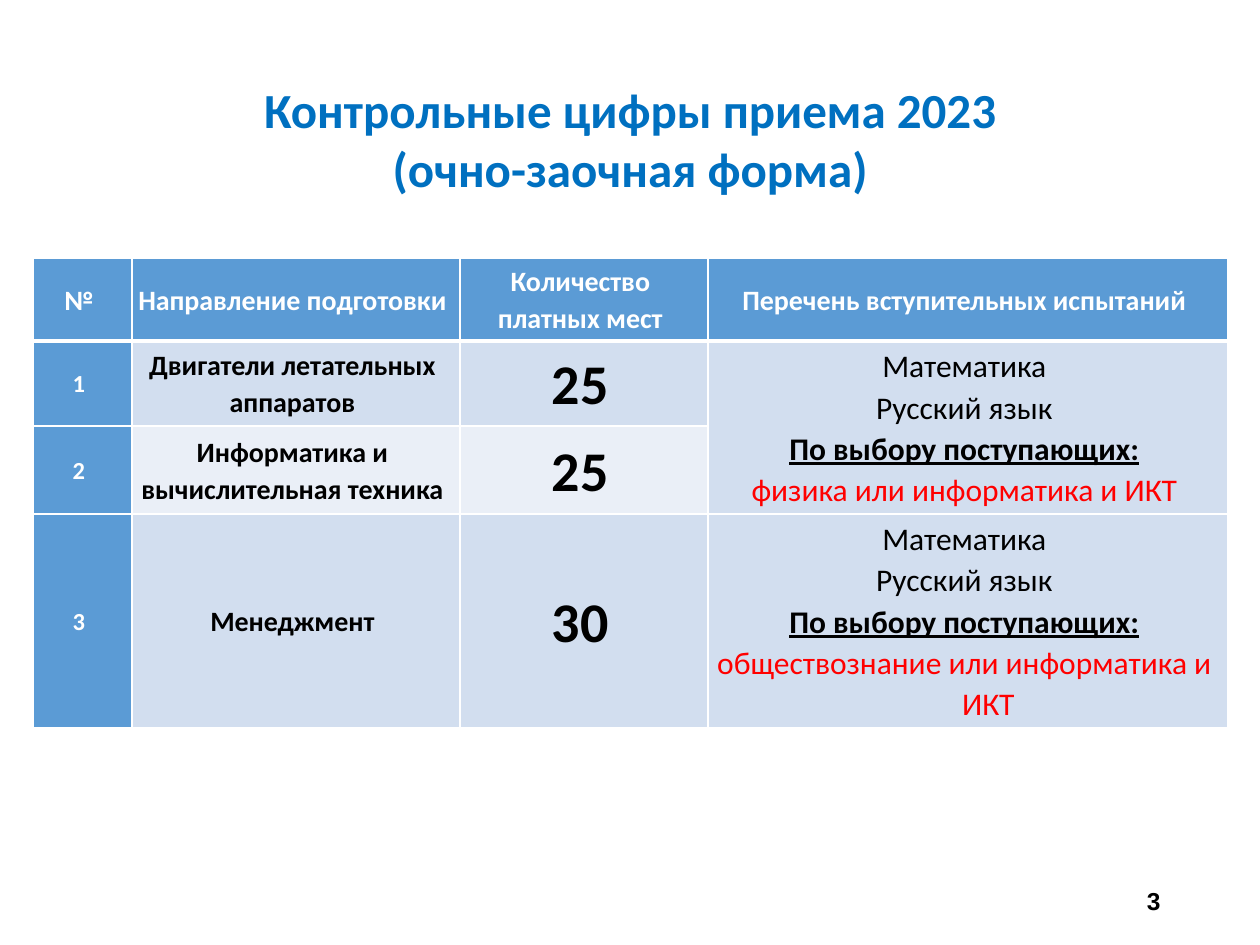
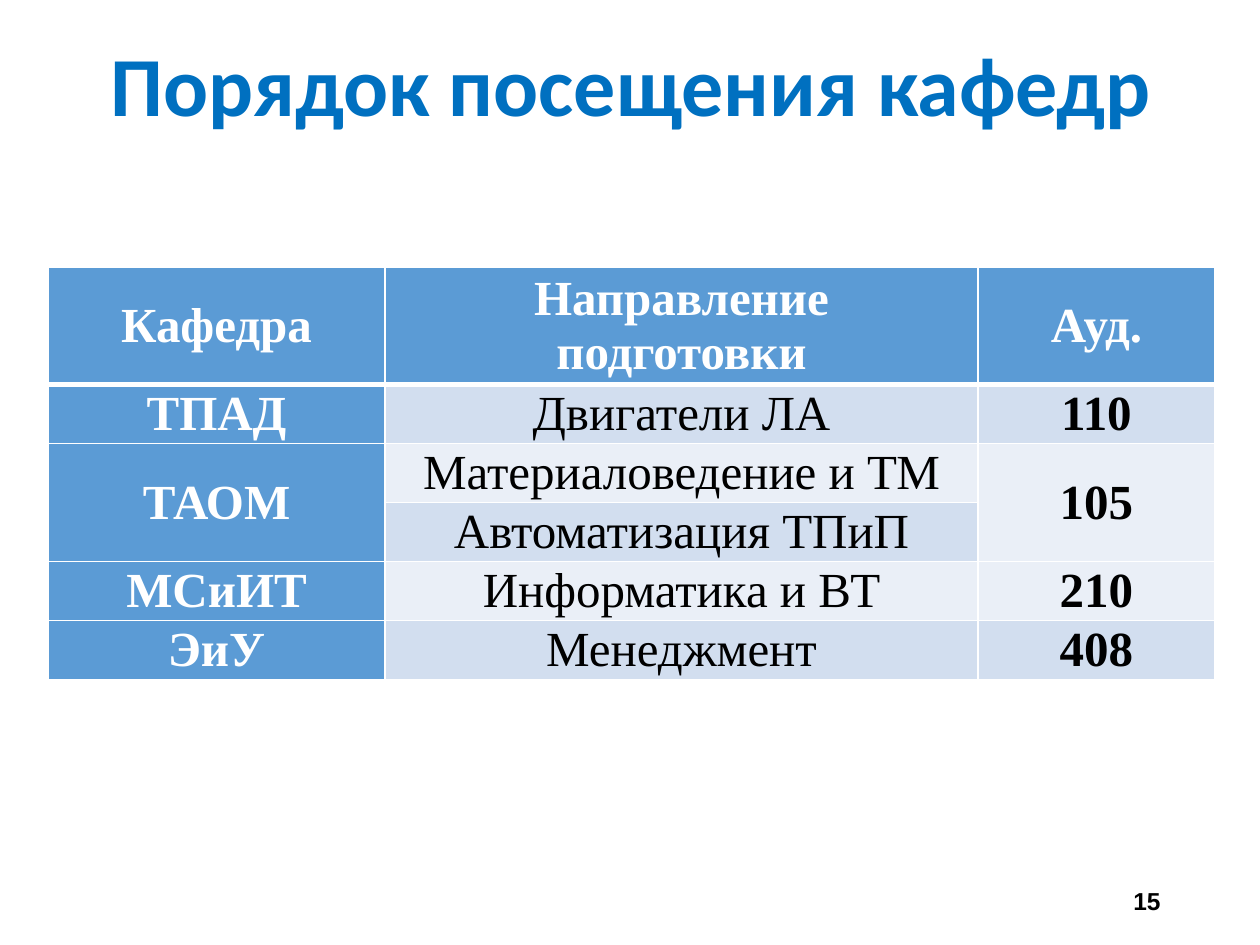
"""Build two admission slides: places by programme, and rooms by department."""
from lxml import etree
from pptx import Presentation
from pptx import util as u
from pptx.dml.color import RGBColor
from pptx.enum import text
from pptx.oxml import ns

PX = 914400 // 126
COLORS = {"title": "0070C0", "header": "5B9BD5", "odd": "D2DEEF", "even": "EAEFF7",
          "white": "FFFFFF", "black": "000000", "choice": "FF0000"}
CENTER, RIGHT = text.PP_ALIGN.CENTER, text.PP_ALIGN.RIGHT
MIDDLE, TOP = text.MSO_ANCHOR.MIDDLE, text.MSO_ANCHOR.TOP


def write(frame, lines, font, size, color, bold=True, align=CENTER, spacing=None, hanging=0):
    """Write one paragraph per line; a line is a string or (string, style overrides)."""
    for i, line in enumerate(lines):
        words, style = (line, {}) if isinstance(line, str) else line
        paragraph = frame.paragraphs[0] if i == 0 else frame.add_paragraph()
        paragraph.alignment = align
        if spacing:
            paragraph.line_spacing = spacing
        if hanging:
            props = paragraph._p.get_or_add_pPr()
            props.set("marL", str(hanging * PX))
            props.set("indent", str(-hanging * PX))
        run = paragraph.add_run()
        run.text = words
        run.font.name = font
        run.font.size = u.Pt(size)
        run.font.bold = style.get("bold", bold)
        if style.get("underline"):
            run.font.underline = True
        run.font.color.rgb = RGBColor.from_string(COLORS[style.get("color", color)])


def add_borders(cell, row):
    """Draw white cell borders, thick between the header and the body."""
    props = cell._tc.get_or_add_tcPr()
    thick = {0: "lnB", 1: "lnT"}.get(row)
    for i, side in enumerate(("lnL", "lnR", "lnT", "lnB")):
        border = etree.Element(ns.qn("a:" + side), w=str(u.Pt(3 if side == thick else 1)))
        fill = etree.SubElement(border, ns.qn("a:solidFill"))
        etree.SubElement(fill, ns.qn("a:srgbClr"), val=COLORS["white"])
        props.insert(i, border)


common_exams = ["Математика", "Русский язык",
                ("По выбору поступающих:", {"bold": True, "underline": True})]
choice = {"color": "choice"}

slides = [
    {
        "title": ["Контрольные цифры приема 2023", "(очно-заочная форма)"],
        "title_box": (0, 73, 1260, 131), "title_size": 28, "number": "3",
        "origin": (33, 258), "columns": [99, 328, 248, 520], "rows": [83, 85, 88, 214],
        "margins": (6, 4, 13, 4), "font": "Calibri", "spacing": 1.07, "header_size": 16,
        "body": [{"size": 14, "color": "white"}, {"size": 16}, {"size": 32},
                 {"size": 18, "bold": False, "hanging": 48}],
        "merges": [(1, 3, 2, 3)],
        "cells": [
            [["№"], ["Направление подготовки"], ["Количество платных мест"],
             ["Перечень вступительных испытаний"]],
            [["1"], ["Двигатели летательных аппаратов"], ["25"],
             common_exams + [("физика или информатика и ИКТ", choice)]],
            [["2"], ["Информатика и вычислительная техника"], ["25"], []],
            [["3"], ["Менеджмент"], ["30"],
             common_exams + [("обществознание или информатика и ИКТ", choice)]],
        ],
    },
    {
        "title": ["Порядок посещения кафедр"],
        "title_box": (31, 26, 1200, 115), "title_size": 48, "number": "15",
        "origin": (48, 267), "columns": [337, 593, 237], "rows": [117] + [59] * 5,
        "margins": (9, 0, 9, 0), "font": "Times New Roman", "spacing": None, "header_size": 28,
        "body": [{"size": 28, "color": "white"}, {"size": 28, "bold": False}, {"size": 28}],
        "merges": [(2, 0, 3, 0), (2, 2, 3, 2)],
        "cells": [
            [["Кафедра"], ["Направление", "подготовки"], ["Ауд."]],
            [["ТПАД"], ["Двигатели ЛА"], ["110"]],
            [["ТАОМ"], ["Материаловедение и ТМ"], ["105"]],
            [[], ["Автоматизация ТПиП"], []],
            [["МСиИТ"], ["Информатика и ВТ"], ["210"]],
            [["ЭиУ"], ["Менеджмент"], ["408"]],
        ],
    },
]

deck = Presentation()
deck.slide_width, deck.slide_height = u.Inches(10), u.Inches(7.5)

for content in slides:
    slide = deck.slides.add_slide(deck.slide_layouts[6])

    labels = [
        (content["title_box"], content["title"], TOP,
         {"font": "Calibri", "size": content["title_size"], "color": "title"}),
        ((890, 876, 283, 50), [content["number"]], MIDDLE,
         {"font": "Arial", "size": 14, "color": "black", "align": RIGHT}),
    ]
    for box, lines, anchor, style in labels:
        frame = slide.shapes.add_textbox(*(n * PX for n in box)).text_frame
        frame.word_wrap = True
        frame.vertical_anchor = anchor
        write(frame, lines, **style)

    columns, rows = content["columns"], content["rows"]
    area = (*content["origin"], sum(columns), sum(rows))
    table = slide.shapes.add_table(len(rows), len(columns), *(n * PX for n in area)).table
    for column, width in zip(table.columns, columns):
        column.width = width * PX
    for row, height in zip(table.rows, rows):
        row.height = height * PX
    for top, left, bottom, right in content["merges"]:
        table.cell(top, left).merge(table.cell(bottom, right))

    for r, row_cells in enumerate(content["cells"]):
        for c, lines in enumerate(row_cells):
            cell = table.cell(r, c)
            band = "header" if r == 0 or c == 0 else "odd" if r % 2 else "even"
            cell.fill.solid()
            cell.fill.fore_color.rgb = RGBColor.from_string(COLORS[band])
            cell.vertical_anchor = MIDDLE
            (cell.margin_left, cell.margin_top,
             cell.margin_right, cell.margin_bottom) = (n * PX for n in content["margins"])
            add_borders(cell, r)
            header = {"size": content["header_size"], "color": "white"}
            style = {"color": "black", **(content["body"][c] if r else header)}
            write(cell.text_frame, lines, content["font"], spacing=content["spacing"], **style)

deck.save("out.pptx")
